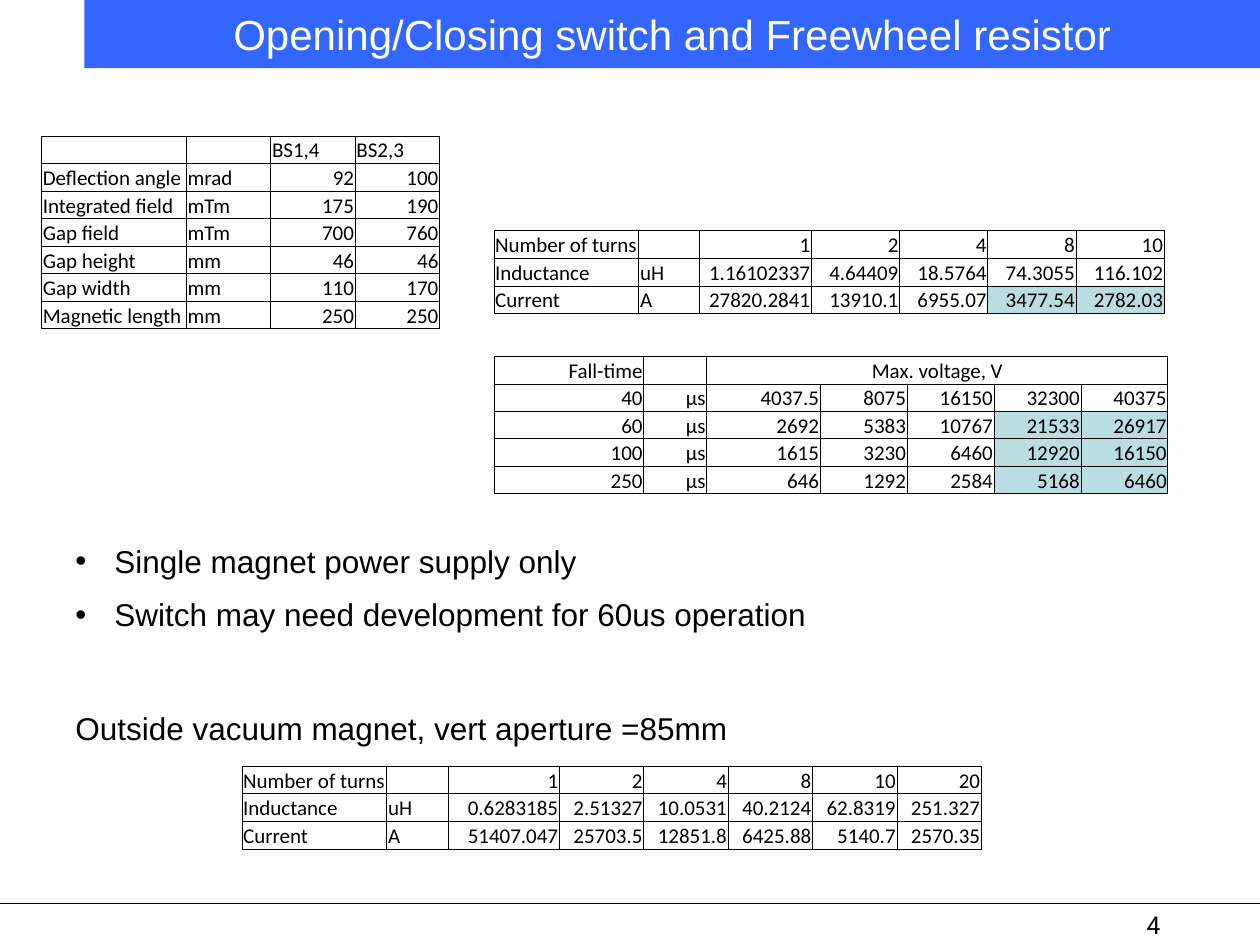
"""Build the slide on the switch and freewheel resistor with its four data tables."""
from lxml.etree import SubElement
from pptx import Presentation
from pptx.dml.color import RGBColor
from pptx.enum.shapes import MSO_CONNECTOR
from pptx.enum.text import MSO_ANCHOR, PP_ALIGN
from pptx.oxml import parse_xml
from pptx.oxml.ns import nsdecls, qn
from pptx.util import Inches, Pt

BLACK = RGBColor(0x00, 0x00, 0x00)
WHITE = RGBColor(0xFF, 0xFF, 0xFF)
BLUE = RGBColor(0x33, 0x66, 0xFF)
TEAL = RGBColor(0xBA, 0xDD, 0xE1)


def add_text(frame, lines, font, size, color=BLACK, align=PP_ALIGN.LEFT, bullet=False):
    frame.word_wrap = True
    for index, line in enumerate(lines):
        paragraph = frame.paragraphs[0] if index == 0 else frame.add_paragraph()
        paragraph.alignment = align
        if index:
            paragraph.space_before = Pt(size / 2)
        if bullet:
            properties = paragraph._p.get_or_add_pPr()
            properties.set("marL", str(Inches(0.31)))
            properties.set("indent", str(Inches(-0.31)))
            SubElement(properties, qn("a:buFont")).set("typeface", "Arial")
            SubElement(properties, qn("a:buChar")).set("char", "•")
        if line:
            run = paragraph.add_run()
            run.text = line
            run.font.name, run.font.size = font, Pt(size)
            run.font.color.rgb = color
        else:
            paragraph._p.get_or_add_endParaRPr().set("sz", str(size * 100))


def add_data_table(slide, left, top, height, widths, rows, highlights=(), text_align=PP_ALIGN.LEFT):
    frame = slide.shapes.add_table(len(rows), len(widths), Inches(left), Inches(top),
                                   Inches(sum(widths)), Inches(height))
    table = frame.table
    table.first_row = table.horz_banding = False
    for column, width in zip(table.columns, widths):
        column.width = Inches(width)
    for row_index, values in enumerate(rows):
        for column_index, value in enumerate(values):
            cell = table.cell(row_index, column_index)
            cell.margin_left = cell.margin_right = cell.margin_top = Inches(0.01)
            cell.margin_bottom = 0
            cell.vertical_anchor = MSO_ANCHOR.BOTTOM
            for side in ("lnL", "lnR", "lnT", "lnB"):
                cell._tc.get_or_add_tcPr().append(parse_xml(
                    f'<a:{side} {nsdecls("a")} w="{Pt(0.5)}"><a:solidFill>'
                    f'<a:srgbClr val="{BLACK}"/></a:solidFill></a:{side}>'))
            if (row_index, column_index) in highlights:
                cell.fill.solid()
                cell.fill.fore_color.rgb = TEAL
            else:
                cell.fill.background()
            numeric = value[:1].isdigit()
            add_text(cell.text_frame, [value], "Calibri", 12,
                     align=PP_ALIGN.RIGHT if numeric else text_align)
    return table


presentation = Presentation()
presentation.slide_width, presentation.slide_height = Inches(10), Inches(7.5)
slide = presentation.slides.add_slide(presentation.slide_layouts[5])

title = slide.shapes.title
title.left, title.top, title.width, title.height = (Inches(v) for v in (0.67, 0, 9.33, 0.54))
title.fill.solid()
title.fill.fore_color.rgb = BLUE
title.text_frame.vertical_anchor = MSO_ANCHOR.MIDDLE
add_text(title.text_frame, ["Opening/Closing switch and Freewheel resistor"],
         "Arial", 24, WHITE, PP_ALIGN.CENTER)

footer_line = slide.shapes.add_connector(MSO_CONNECTOR.STRAIGHT, 0, Inches(7.17),
                                         Inches(10), Inches(7.17))
footer_line.line.color.rgb = BLACK
footer_line.line.width = Pt(0.75)
SubElement(footer_line._element.spPr, qn("a:effectLst"))

page_number = slide.shapes.add_textbox(0, Inches(7.17), Inches(10), Inches(0.33))
page_number.text_frame.margin_left = Inches(9.1)
add_text(page_number.text_frame, ["4"], "Roboto", 14)

add_data_table(slide, 3.92, 1.83, 0.66, [1.15, 0.48, 0.89] + [0.7] * 4, [
    ["Number of turns", "", "1", "2", "4", "8", "10"],
    ["Inductance", "uH", "1.16102337", "4.64409", "18.5764", "74.3055", "116.102"],
    ["Current", "A", "27820.2841", "13910.1", "6955.07", "3477.54", "2782.03"],
], highlights=[(2, 5), (2, 6)])

add_data_table(slide, 0.33, 1.08, 1.53, [1.15] + [0.67] * 3, [
    ["", "", "BS1,4", "BS2,3"],
    ["Deflection angle", "mrad", "92", "100"],
    ["Integrated field", "mTm", "175", "190"],
    ["Gap field", "mTm", "700", "760"],
    ["Gap height", "mm", "46", "46"],
    ["Gap width", "mm", "110", "170"],
    ["Magnetic length", "mm", "250", "250"],
])

voltage_table = add_data_table(slide, 3.92, 2.83, 1.09, [1.19, 0.5, 0.9] + [0.69] * 4, [
    ["Fall-time", "", "Max. voltage, V", "", "", "", ""],
    ["40", "µs", "4037.5", "8075", "16150", "32300", "40375"],
    ["60", "µs", "2692", "5383", "10767", "21533", "26917"],
    ["100", "µs", "1615", "3230", "6460", "12920", "16150"],
    ["250", "µs", "646", "1292", "2584", "5168", "6460"],
], highlights=[(row, column) for row in (2, 3, 4) for column in (5, 6)],
    text_align=PP_ALIGN.RIGHT)
voltage_header = voltage_table.cell(0, 2)
voltage_header.merge(voltage_table.cell(0, 6))
voltage_header.text_frame.paragraphs[0].alignment = PP_ALIGN.CENTER

add_data_table(slide, 1.92, 6.08, 0.66, [1.15, 0.49, 0.88] + [0.67] * 5, [
    ["Number of turns", "", "1", "2", "4", "8", "10", "20"],
    ["Inductance", "uH", "0.6283185", "2.51327", "10.0531", "40.2124", "62.8319", "251.327"],
    ["Current", "A", "51407.047", "25703.5", "12851.8", "6425.88", "5140.7", "2570.35"],
])

remarks = slide.shapes.add_textbox(Inches(0.5), Inches(4.25), Inches(9.17), Inches(0.86))
add_text(remarks.text_frame, ["Single magnet power supply only",
                              "Switch may need development for 60us operation"],
         "Arial", 18, bullet=True)

aperture_note = slide.shapes.add_textbox(Inches(0.5), Inches(5.58), Inches(9.17), Inches(0.4))
add_text(aperture_note.text_frame, ["Outside vacuum magnet, vert aperture =85mm"], "Arial", 18)

presentation.save("out.pptx")
